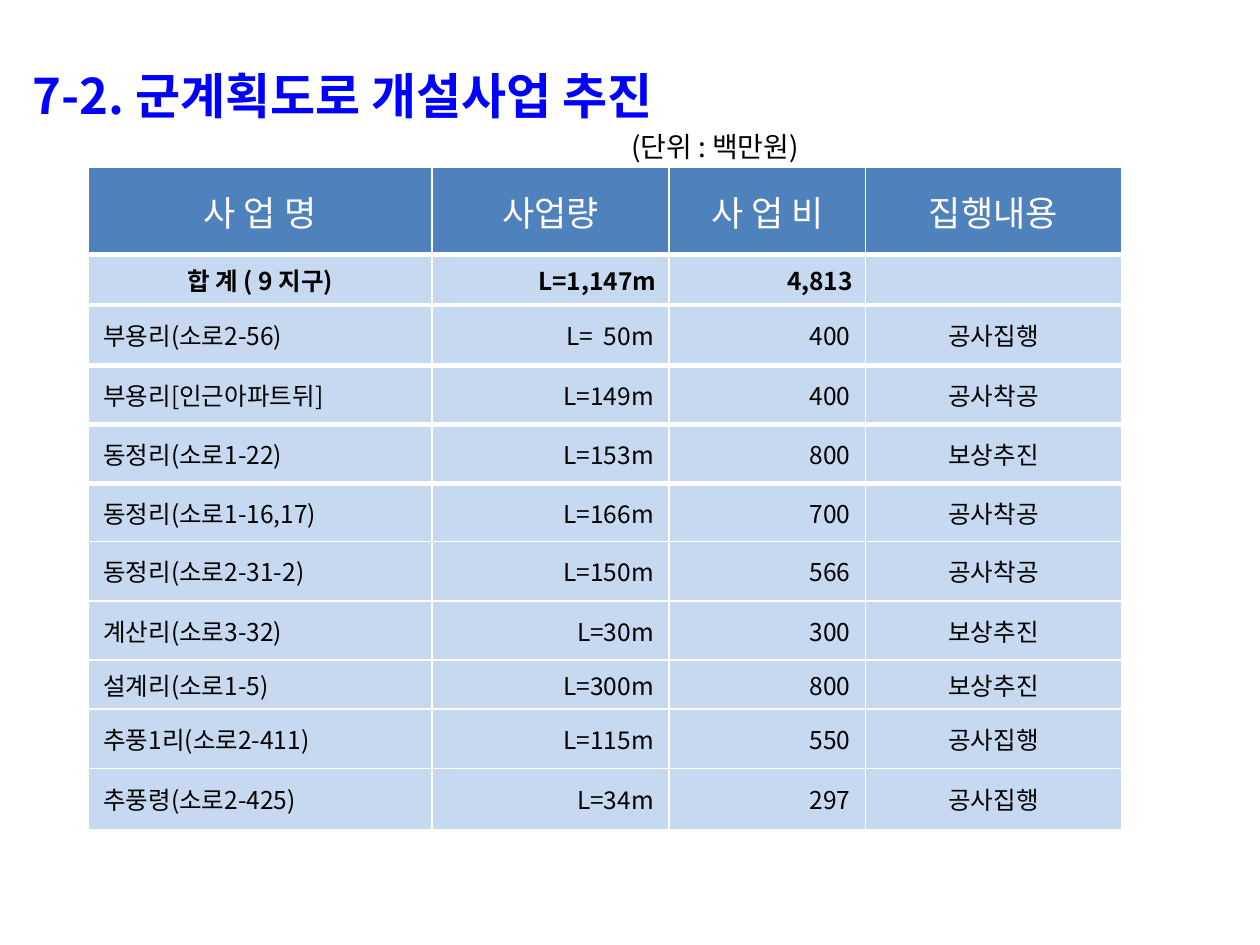
"""Builds a slide with a table of county road projects."""
from lxml.etree import SubElement
from pptx import Presentation
from pptx.dml.color import RGBColor
from pptx.enum.text import MSO_ANCHOR, MSO_AUTO_SIZE, PP_ALIGN
from pptx.oxml.ns import qn
from pptx.util import Inches, Pt

FONT = "Noto Sans CJK KR"
TITLE = "7-2. 군계획도로 개설사업 추진"
UNIT = "(단위 : 백만원)"
ROWS = [
    ("사 업 명", "사업량", "사 업 비", "집행내용"),
    ("합 계 ( 9 지구)", "L=1,147m", "4,813", ""),
    ("부용리(소로2-56)", "L=  50m", "400", "공사집행"),
    ("부용리[인근아파트뒤]", "L=149m", "400", "공사착공"),
    ("동정리(소로1-22)", "L=153m", "800", "보상추진"),
    ("동정리(소로1-16,17)", "L=166m", "700", "공사착공"),
    ("동정리(소로2-31-2)", "L=150m", "566", "공사착공"),
    ("계산리(소로3-32)", "L=30m", "300", "보상추진"),
    ("설계리(소로1-5)", "L=300m", "800", "보상추진"),
    ("추풍1리(소로2-411)", "L=115m", "550", "공사집행"),
    ("추풍령(소로2-425)", "L=34m", "297", "공사집행"),
]
WIDTHS = [2.73, 1.88, 1.56, 2.03]
HEIGHTS = [0.69, 0.4, 0.48, 0.47, 0.47, 0.46, 0.47, 0.47, 0.39, 0.47, 0.49]
ALIGNS = [PP_ALIGN.LEFT, PP_ALIGN.RIGHT, PP_ALIGN.RIGHT, PP_ALIGN.CENTER]
THICK = 5


def color(code):
    return RGBColor.from_string(code)


def style(para, size, code, bold=False, align=PP_ALIGN.LEFT):
    para.alignment = align
    font = para.font
    font.name, font.size, font.bold = FONT, Pt(size), bold
    font.color.rgb = color(code)
    props = para._p.pPr.find(qn("a:defRPr"))
    SubElement(props, qn("a:ea"), typeface=FONT)


def border(cell, top, bottom):
    props = cell._tc.get_or_add_tcPr()
    for side, width in zip("LRTB", (1, 1, top, bottom)):
        line = SubElement(props, qn(f"a:ln{side}"), w=str(Pt(width)))
        fill = SubElement(line, qn("a:solidFill"))
        SubElement(fill, qn("a:srgbClr"), val="FFFFFF")


def add_title(slide):
    title = slide.shapes.title
    title.left, title.top = Inches(0.16), Inches(0.46)
    title.width, title.height = Inches(9.14), Inches(0.9)
    frame = title.text_frame
    frame.word_wrap = True
    frame.auto_size = MSO_AUTO_SIZE.NONE
    frame.vertical_anchor = MSO_ANCHOR.MIDDLE
    frame.text = TITLE
    style(frame.paragraphs[0], 28, "0000FF", True)
    unit = frame.add_paragraph()
    unit.text = UNIT
    unit.space_before = Pt(3)
    style(unit, 16, "000000")
    unit._p.pPr.set("marL", str(Inches(4.75)))


def add_grid(slide):
    grid = slide.shapes.add_table(
        len(ROWS), len(WIDTHS), Inches(0.7), Inches(1.33),
        Inches(sum(WIDTHS)), Inches(sum(HEIGHTS))).table
    for col, width in zip(grid.columns, WIDTHS):
        col.width = Inches(width)
    for i, (row, height) in enumerate(zip(ROWS, HEIGHTS)):
        grid.rows[i].height = Inches(height)
        head, total = i == 0, i == 1
        for j, text in enumerate(row):
            cell = grid.cell(i, j)
            border(cell, 3 if 0 < i <= THICK else 1, 3 if i < THICK else 1)
            cell.fill.solid()
            cell.fill.fore_color.rgb = color("4F81BD" if head else "C6D9F1")
            cell.vertical_anchor = MSO_ANCHOR.MIDDLE
            cell.margin_left = cell.margin_right = Inches(0.1 if i < 2 else 0.12)
            cell.text = text
            center = head or (total and j == 0)
            style(cell.text_frame.paragraphs[0], 20 if head else 14,
                  "FFFFFF" if head else "000000", total,
                  PP_ALIGN.CENTER if center else ALIGNS[j])


def main():
    deck = Presentation()
    deck.slide_width, deck.slide_height = Inches(10), Inches(7.5)
    slide = deck.slides.add_slide(deck.slide_layouts[5])
    add_title(slide)
    add_grid(slide)
    deck.save("out.pptx")


if __name__ == "__main__":
    main()
